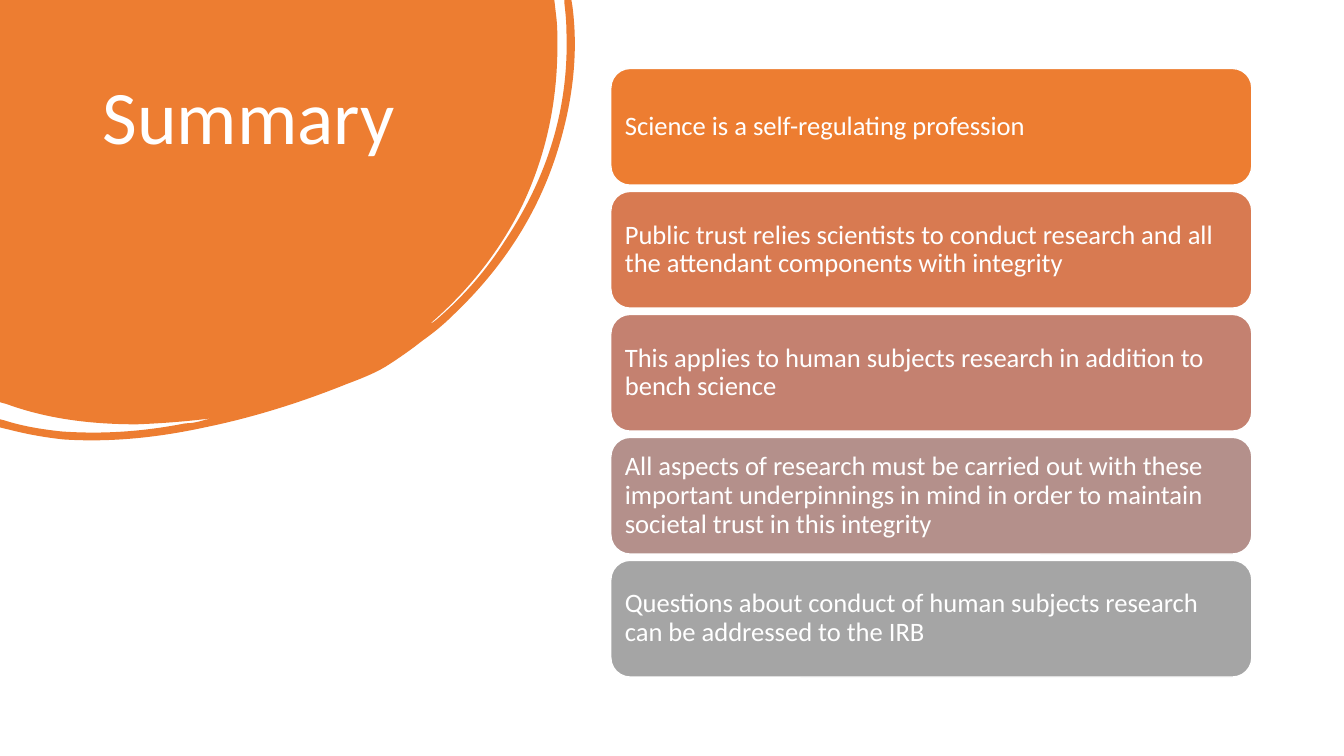
from dataclasses import dataclass

from lxml import etree
from pptx import Presentation
from pptx.dml.color import RGBColor
from pptx.enum.shapes import MSO_SHAPE
from pptx.enum.text import MSO_ANCHOR, PP_ALIGN
from pptx.oxml.ns import qn
from pptx.shapes.autoshape import Shape
from pptx.slide import Slide
from pptx.util import Pt

ROUNDED = MSO_SHAPE.ROUNDED_RECTANGLE
TOP, MIDDLE = MSO_ANCHOR.TOP, MSO_ANCHOR.MIDDLE
LEFT = PP_ALIGN.LEFT

ORANGE, WHITE = "ED7D31", "FFFFFF"
CARD_LEFT, CARD_TOP, CARD_WIDTH, CARD_HEIGHT = 436.3, 48.9, 457.9, 83.4
CARD_PITCH = 87.84

# Two numbers are a line's end; six are a curve's two controls and its end.
BLOB_OUTLINE = [
    (396, 0),
    (397.4, 12.2),
    (398.2, 18.7, 398.2, 25.9, 398.2, 32.4),
    (398.2, 72.7, 390.2, 110.9, 373, 146.9),
    (357.1, 179.3, 334.8, 207.4, 307.4, 231.1),
    (308.9, 231.1, 309.6, 229.7, 311, 229),
    (330.5, 212.4, 347, 193.7, 360.7, 172.1),
    (391, 126.7, 406.8, 77, 404.6, 21.6),
    (404.6, 15.1, 403.9, 8.6, 403.2, 2.2),
    (403.2, 0),
    (408.2, 0),
    (409, 5),
    (413.3, 38.9, 409, 73.4, 398.2, 108),
    (383.8, 154.1, 357.8, 193, 322.6, 226.1),
    (316.1, 232.6, 308.9, 238.3, 301.7, 243.4),
    (294.5, 249.1, 287.3, 254.2, 278.6, 259.9),
    (270, 265.7, 259.2, 270, 247.7, 274.3),
    (215.3, 287.3, 181.4, 298.1, 146.2, 305.3),
    (113, 312.5, 79.2, 316.1, 45.4, 313.9),
    (32.4, 312.5, 20.2, 310.3, 8.6, 307.4),
    (0, 305.3),
    (0, 299.5),
    (2.9, 300.2),
    (16.6, 304.6, 30.2, 306.7, 43.9, 308.2),
    (74.2, 310.3, 103, 308.2, 132.5, 302.4),
    (136.8, 302.4, 139.7, 301.7, 142.6, 301),
    (145.4, 300.2, 148.3, 299.5, 151.2, 298.8),
    (133.9, 301, 115.9, 302.4, 97.9, 303.1),
    (66.2, 303.1, 34.6, 299.5, 5, 288.7),
    (0, 287.3),
]


@dataclass(frozen=True)
class Card:
    text: str
    fill: str


CARDS = [
    Card("Science is a self-regulating profession", ORANGE),
    Card("Public trust relies scientists to conduct research and all the "
         "attendant components with integrity", "D87A51"),
    Card("This applies to human subjects research in addition to bench science",
         "C48170"),
    Card("All aspects of research must be carried out with these important "
         "underpinnings in mind in order to maintain societal trust in this "
         "integrity", "B4908B"),
    Card("Questions about conduct of human subjects research can be addressed "
         "to the IRB", "A5A5A5"),
]


def color(value: str) -> RGBColor:
    return RGBColor.from_string(value)


def set_fill(shape: Shape, value: str) -> None:
    shape.shadow.inherit = False
    shape.fill.solid()
    shape.fill.fore_color.rgb = color(value)


def write(shape: Shape, text: str, size: float, anchor: MSO_ANCHOR,
          margins: tuple[float, float]) -> None:
    """Put white text in the shape; margins are horizontal, then vertical."""
    across, down = (Pt(margin) for margin in margins)
    frame = shape.text_frame
    para = frame.paragraphs[0]
    span = para.add_run()
    span.text = text
    formats = [
        (frame, {"word_wrap": True, "vertical_anchor": anchor,
                 "margin_left": across, "margin_right": across,
                 "margin_top": down, "margin_bottom": down}),
        (para, {"alignment": LEFT, "line_spacing": 0.9}),
        (span.font, {"name": "Calibri", "size": Pt(size)}),
    ]
    for target, values in formats:
        for name, value in values.items():
            setattr(target, name, value)
    span.font.color.rgb = color(WHITE)


def bend_curves(shape: Shape, outline: list[tuple[float, ...]]) -> None:
    """Join each curve's three straight segments into one Bézier segment."""
    segments = iter(list(shape.element.iter(qn("a:lnTo"))))
    for numbers in outline:
        first = next(segments)
        if len(numbers) == 2:
            continue
        curve = etree.Element(qn("a:cubicBezTo"))
        first.addprevious(curve)
        for segment in (first, next(segments), next(segments)):
            curve.append(segment[0])
            segment.getparent().remove(segment)


def draw_blob(page: Slide) -> None:
    points = [(Pt(x), Pt(y)) for numbers in BLOB_OUTLINE
              for x, y in zip(numbers[::2], numbers[1::2])]
    builder = page.shapes.build_freeform(0, 0)
    builder.add_line_segments(points, close=True)
    blob = builder.convert_to_shape()
    bend_curves(blob, BLOB_OUTLINE)
    set_fill(blob, ORANGE)
    blob.line.fill.background()


def draw_title(page: Slide) -> None:
    box = page.shapes.add_textbox(Pt(66), Pt(53.3), Pt(253.4), Pt(159.8))
    write(box, "Summary", 54, TOP, (7.2, 3.6))


def draw_card(page: Slide, card: Card, top: float) -> None:
    box = page.shapes.add_shape(ROUNDED, Pt(CARD_LEFT), Pt(top),
                                Pt(CARD_WIDTH), Pt(CARD_HEIGHT))
    set_fill(box, card.fill)
    box.line.color.rgb = color(WHITE)
    box.line.width = Pt(1)
    write(box, card.text, 19, MIDDLE, (6, 5.7))


def main() -> None:
    deck = Presentation()
    deck.slide_width, deck.slide_height = Pt(960), Pt(540)
    page = deck.slides.add_slide(deck.slide_layouts[6])
    draw_blob(page)
    draw_title(page)
    for index, card in enumerate(CARDS):
        draw_card(page, card, CARD_TOP + index * CARD_PITCH)
    deck.save("out.pptx")


if __name__ == "__main__":
    main()
